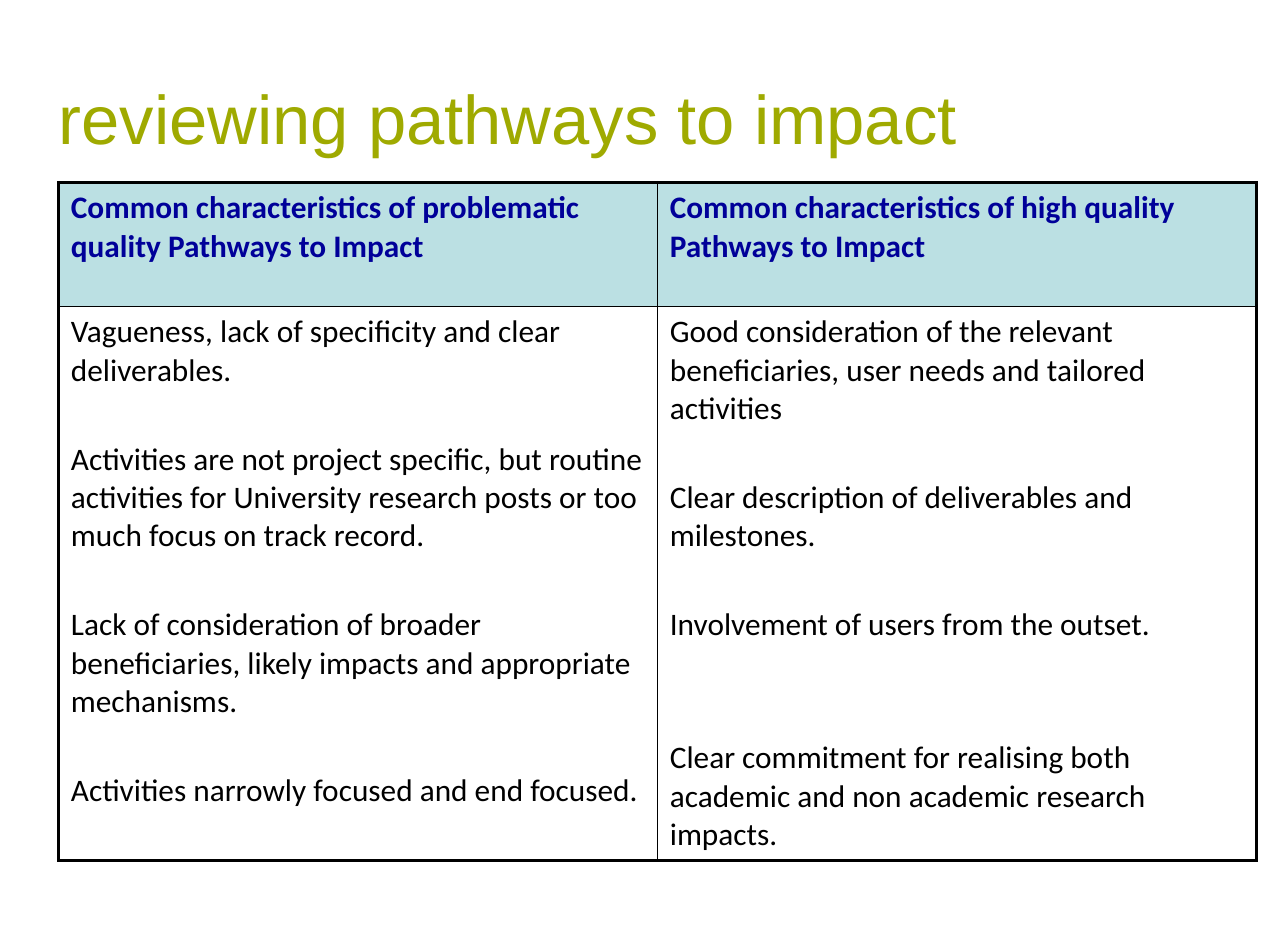
from lxml.etree import SubElement
from pptx import Presentation
from pptx.dml.color import RGBColor as RGB
from pptx.enum.text import MSO_ANCHOR as Anchor, MSO_AUTO_SIZE as AutoSize, PP_ALIGN as Align
from pptx.oxml.ns import qn
from pptx.util import Inches, Pt

SLIDE_WIDTH, SLIDE_HEIGHT = 11.44, 8.27
LEFT = 0.52
TABLE_TOP = 1.62
COLUMN_WIDTH = 5.32
ROW_HEIGHTS = (1.1, 4.92)

COLORS = {"title": "9FAA00", "heading": "000099", "body": "000000",
          "heading_fill": "BBE0E3", "body_fill": "FFFFFF", "border": "000000"}
OUTER_LINE, INNER_LINE = 2.25, 1

TITLE_FONT = {"name": "Arial", "size": Pt(44), "bold": False}
HEADING_FONT = {"name": "Calibri", "size": Pt(20), "bold": True}
BODY_FONT = {**HEADING_FONT, "bold": False}
TITLE_FRAME = {"margin_left": 0, "margin_right": 0, "margin_top": 0, "margin_bottom": 0,
               "word_wrap": True, "auto_size": AutoSize.NONE,
               "vertical_anchor": Anchor.BOTTOM}
CELL_FORMAT = {"margin_left": Inches(0.11), "margin_right": Inches(0.11),
               "margin_top": Inches(0.06), "margin_bottom": Inches(0.06),
               "vertical_anchor": Anchor.TOP}

# Points of space above each statement after the first
GAP, WIDE_GAP = 32.5, 60.5

HEADINGS = ("Common characteristics of problematic quality Pathways to Impact",
            "Common characteristics of high quality Pathways to Impact")
PROBLEMATIC = (
    ("Vagueness, lack of specificity and clear deliverables.", 0),
    ("Activities are not project specific, but routine activities for University "
     "research posts or too much focus on track record.", GAP),
    ("Lack of consideration of broader beneficiaries, likely impacts and "
     "appropriate mechanisms.", GAP),
    ("Activities narrowly focused and end focused.", GAP),
)
HIGH_QUALITY = (
    ("Good consideration of the relevant beneficiaries, user needs and tailored "
     "activities", 0),
    ("Clear description of deliverables and milestones.", GAP),
    ("Involvement of users from the outset.", GAP),
    ("Clear commitment for realising both academic and non academic research "
     "impacts.", WIDE_GAP),
)


def apply_format(target, values):
    for name, value in values.items():
        setattr(target, name, value)


def write_statements(frame, statements, font, color):
    for index, (wording, gap) in enumerate(statements):
        statement = frame.paragraphs[0] if index == 0 else frame.add_paragraph()
        apply_format(statement, {"alignment": Align.LEFT, "space_before": Pt(gap)})
        run = statement.add_run()
        run.text = wording
        apply_format(run.font, font)
        run.font.color.rgb = RGB.from_string(COLORS[color])


def draw_borders(cell, row, column, last_row, last_column):
    on_edge = {"lnL": column == 0, "lnR": column == last_column,
               "lnT": row == 0, "lnB": row == last_row}
    properties = cell._tc.get_or_add_tcPr()
    for side, outer in on_edge.items():
        width = Pt(OUTER_LINE if outer else INNER_LINE)
        border = SubElement(properties, qn(f"a:{side}"), w=str(int(width)))
        fill = SubElement(border, qn("a:solidFill"))
        SubElement(fill, qn("a:srgbClr"), val=COLORS["border"])


def add_title(slide, wording):
    title = slide.shapes.title
    apply_format(title, {"left": Inches(LEFT), "top": Inches(0.67),
                         "width": Inches(8.98), "height": Inches(0.74)})
    apply_format(title.text_frame, TITLE_FRAME)
    write_statements(title.text_frame, [(wording, 0)], TITLE_FONT, "title")


def add_comparison(slide, rows):
    row_count, column_count = len(rows), len(rows[0])
    comparison = slide.shapes.add_table(
        row_count, column_count, Inches(LEFT), Inches(TABLE_TOP),
        Inches(COLUMN_WIDTH * column_count), Inches(sum(ROW_HEIGHTS))).table
    for row, height in zip(comparison.rows, ROW_HEIGHTS):
        row.height = Inches(height)
    for row, contents in enumerate(rows):
        kind, font = ("heading", HEADING_FONT) if row == 0 else ("body", BODY_FONT)
        for column, statements in enumerate(contents):
            cell = comparison.cell(row, column)
            apply_format(cell, CELL_FORMAT)
            draw_borders(cell, row, column, row_count - 1, column_count - 1)
            cell.fill.solid()
            cell.fill.fore_color.rgb = RGB.from_string(COLORS[f"{kind}_fill"])
            write_statements(cell.text_frame, statements, font, kind)


def main():
    deck = Presentation()
    apply_format(deck, {"slide_width": Inches(SLIDE_WIDTH),
                        "slide_height": Inches(SLIDE_HEIGHT)})
    slide = deck.slides.add_slide(deck.slide_layouts.get_by_name("Title Only"))

    # Title
    add_title(slide, "reviewing pathways to impact")

    # Comparison table: headings above the two lists
    headings = [[(heading, 0)] for heading in HEADINGS]
    add_comparison(slide, [headings, [PROBLEMATIC, HIGH_QUALITY]])

    deck.save("out.pptx")


if __name__ == "__main__":
    main()
